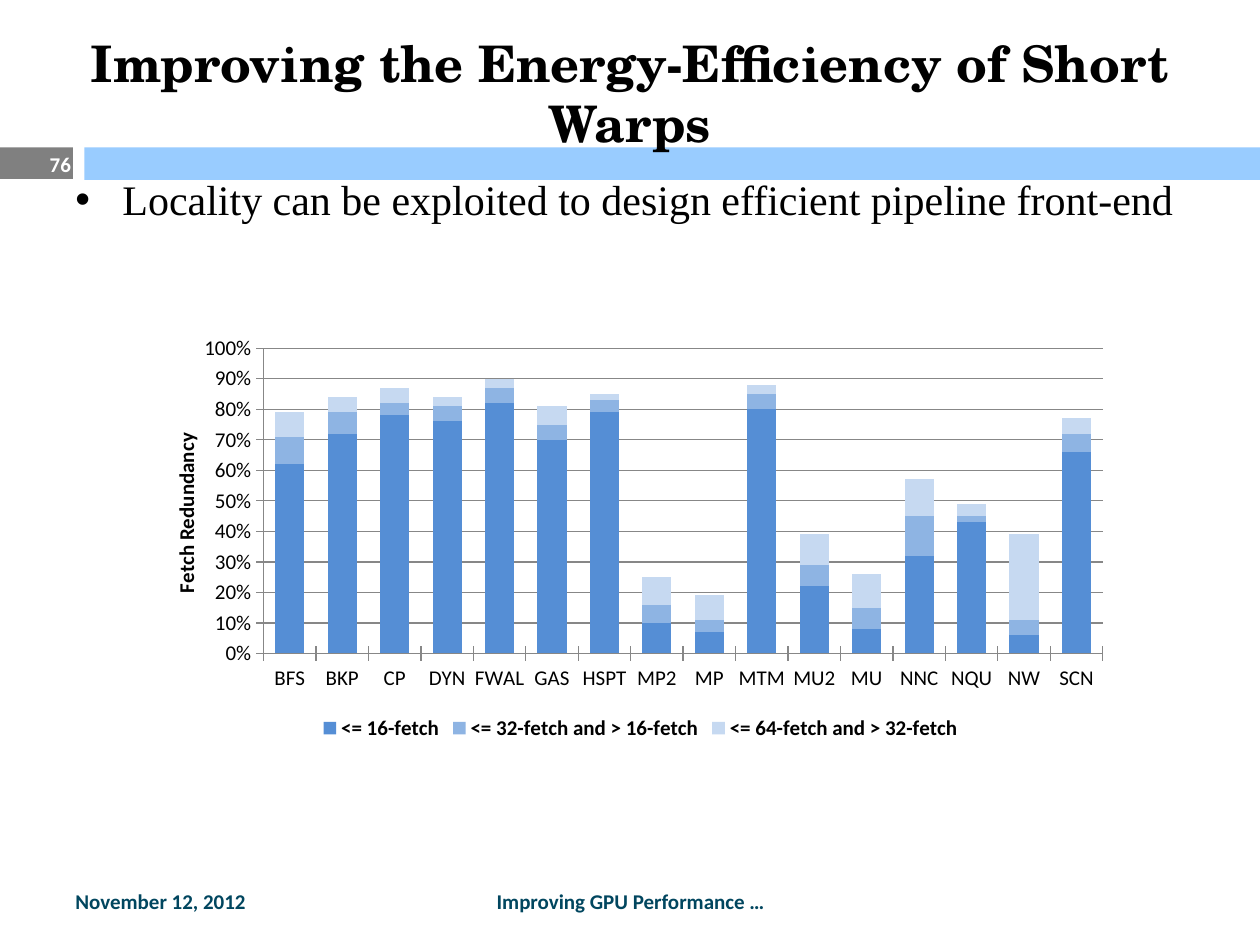
from dataclasses import dataclass

from lxml import etree
from pptx import Presentation
from pptx import util as u
from pptx.chart import data as chart_data
from pptx.dml.color import RGBColor
from pptx.enum import chart as charts, shapes, text
from pptx.oxml import ns


@dataclass(frozen=True)
class Theme:
    ink: str = "000000"
    paper: str = "FFFFFF"
    number_bar: str = "808080"
    title_bar: str = "99CCFF"
    footer: str = "01465F"
    axis: str = "878787"
    title_font: str = "TeX Gyre Schola"
    body_font: str = "Times New Roman"
    small_font: str = "Calibri"
    title_size: float = 28.8
    body_size: float = 24
    small_size: float = 12


@dataclass(frozen=True)
class Area:
    left: float
    top: float
    width: float
    height: float

    def lengths(self) -> tuple:
        return tuple(u.Cm(n) for n in (self.left, self.top, self.width, self.height))


@dataclass(frozen=True)
class Bar:
    area: Area
    color: str


@dataclass(frozen=True)
class Label:
    words: str
    area: Area
    font: str
    size: float
    color: str
    bold: bool = True
    align: text.PP_ALIGN = text.PP_ALIGN.LEFT
    anchor: text.MSO_ANCHOR = text.MSO_ANCHOR.MIDDLE
    bullet_indent: float = 0


@dataclass(frozen=True)
class FetchBand:
    name: str
    color: str
    percents: tuple


THEME = Theme()
SMALL = (THEME.small_font, THEME.small_size)

BARS = (
    Bar(Area(0, 2.97, 1.47, 0.64), THEME.number_bar),
    Bar(Area(1.7, 2.97, 23.7, 0.66), THEME.title_bar),
)

LABELS = (
    Label("Improving the Energy-Efficiency of Short Warps", Area(1.27, 0.76, 22.86, 2.21),
          THEME.title_font, THEME.title_size, THEME.ink, align=text.PP_ALIGN.CENTER),
    Label("Locality can be exploited to design efficient pipeline front-end",
          Area(1.27, 3.38, 22.86, 13.64), THEME.body_font, THEME.body_size, THEME.ink,
          bold=False, anchor=text.MSO_ANCHOR.TOP, bullet_indent=0.95),
    Label("76", Area(0, 2.79, 1.68, 1.02), *SMALL, THEME.paper, align=text.PP_ALIGN.RIGHT),
    Label("November 12, 2012", Area(1.27, 17.65, 5.92, 1.02), *SMALL, THEME.footer),
    Label("Improving GPU Performance …", Area(8.69, 17.65, 8.05, 1.02), *SMALL, THEME.footer,
          align=text.PP_ALIGN.CENTER),
)

CHART_AREA = Area(3.39, 6.77, 19.05, 8.26)
PLOT = {"x": 0.101, "y": 0.028, "w": 0.888, "h": 0.747}
BENCHMARKS = ("BFS BKP CP DYN FWAL GAS HSPT MP2 MP MTM MU2 MU NNC NQU NW SCN").split()
BANDS = (
    FetchBand("<= 16-fetch", "558ED5",
              (62, 72, 78, 76, 82, 70, 79, 10, 7, 80, 22, 8, 32, 43, 6, 66)),
    FetchBand("<= 32-fetch and > 16-fetch", "8EB4E3",
              (9, 7, 4, 5, 5, 5, 4, 6, 4, 5, 7, 7, 13, 2, 5, 6)),
    FetchBand("<= 64-fetch and > 32-fetch", "C6D9F1",
              (8, 5, 5, 3, 3, 6, 2, 9, 8, 3, 10, 11, 12, 4, 28, 5)),
)


def style_font(font, name: str, size: float, color: str, bold: bool) -> None:
    font.name = name
    font.size = u.Pt(size)
    font.bold = bold
    font.color.rgb = RGBColor.from_string(color)


def draw_bar(page, bar: Bar) -> None:
    box = page.shapes.add_shape(shapes.MSO_SHAPE.RECTANGLE, *bar.area.lengths())
    box.shadow.inherit = False
    box.fill.solid()
    box.fill.fore_color.rgb = RGBColor.from_string(bar.color)
    box.line.fill.background()


def add_bullet(para, indent: float) -> None:
    properties = para._p.get_or_add_pPr()
    properties.set("marL", str(u.Cm(indent)))
    properties.set("indent", str(-u.Cm(indent)))
    etree.SubElement(properties, ns.qn("a:buFont"), typeface="Arial")
    etree.SubElement(properties, ns.qn("a:buChar"), char="•")


def draw_label(page, label: Label) -> None:
    frame = page.shapes.add_textbox(*label.area.lengths()).text_frame
    frame.word_wrap = True
    frame.vertical_anchor = label.anchor
    para = frame.paragraphs[0]
    para.text = label.words
    para.alignment = label.align
    if label.bullet_indent:
        add_bullet(para, label.bullet_indent)
    style_font(para.font, label.font, label.size, label.color, label.bold)


def place_plot(chart) -> None:
    plot_area = chart._chartSpace.chart.plotArea
    for old in plot_area.findall(ns.qn("c:layout")):
        plot_area.remove(old)
    layout = etree.Element(ns.qn("c:layout"))
    manual = etree.SubElement(layout, ns.qn("c:manualLayout"))
    settings = {"layoutTarget": "inner", "xMode": "edge", "yMode": "edge", **PLOT}
    for tag, value in settings.items():
        etree.SubElement(manual, ns.qn(f"c:{tag}"), val=str(value))
    plot_area.insert(0, layout)


def draw_chart(page) -> None:
    data = chart_data.CategoryChartData(number_format="0%")
    data.categories = BENCHMARKS
    for band in BANDS:
        data.add_series(band.name, [percent / 100 for percent in band.percents])
    chart = page.shapes.add_chart(
        charts.XL_CHART_TYPE.COLUMN_STACKED, *CHART_AREA.lengths(), data).chart
    style_font(chart.font, *SMALL, THEME.ink, False)
    chart.has_title = False
    chart.has_legend = True
    chart.legend.position = charts.XL_LEGEND_POSITION.BOTTOM
    chart.legend.include_in_layout = False
    style_font(chart.legend.font, *SMALL, THEME.ink, True)

    plot = chart.plots[0]
    plot.gap_width = 80
    plot.overlap = 100
    plot.vary_by_categories = False
    for series, band in zip(plot.series, BANDS):
        series.format.fill.solid()
        series.format.fill.fore_color.rgb = RGBColor.from_string(band.color)

    values = chart.value_axis
    values.minimum_scale, values.maximum_scale, values.major_unit = 0, 1, 0.1
    values.tick_labels.number_format = "0%"
    values.tick_labels.number_format_is_linked = False
    values.has_major_gridlines = True
    para = values.axis_title.text_frame.paragraphs[0]
    para.text = "Fetch Redundancy"
    style_font(para.font, *SMALL, THEME.ink, True)
    for axis in (chart.category_axis, values):
        axis.major_tick_mark = charts.XL_TICK_MARK.CROSS
    for line in (chart.category_axis.format.line, values.format.line,
                 values.major_gridlines.format.line):
        line.color.rgb = RGBColor.from_string(THEME.axis)
        line.width = u.Pt(0.75)
    place_plot(chart)


def main() -> None:
    deck = Presentation()
    deck.slide_width, deck.slide_height = u.Cm(25.4), u.Cm(19.05)
    page = deck.slides.add_slide(deck.slide_layouts[6])
    for bar in BARS:
        draw_bar(page, bar)
    for label in LABELS:
        draw_label(page, label)
    draw_chart(page)
    deck.save("out.pptx")


if __name__ == "__main__":
    main()
